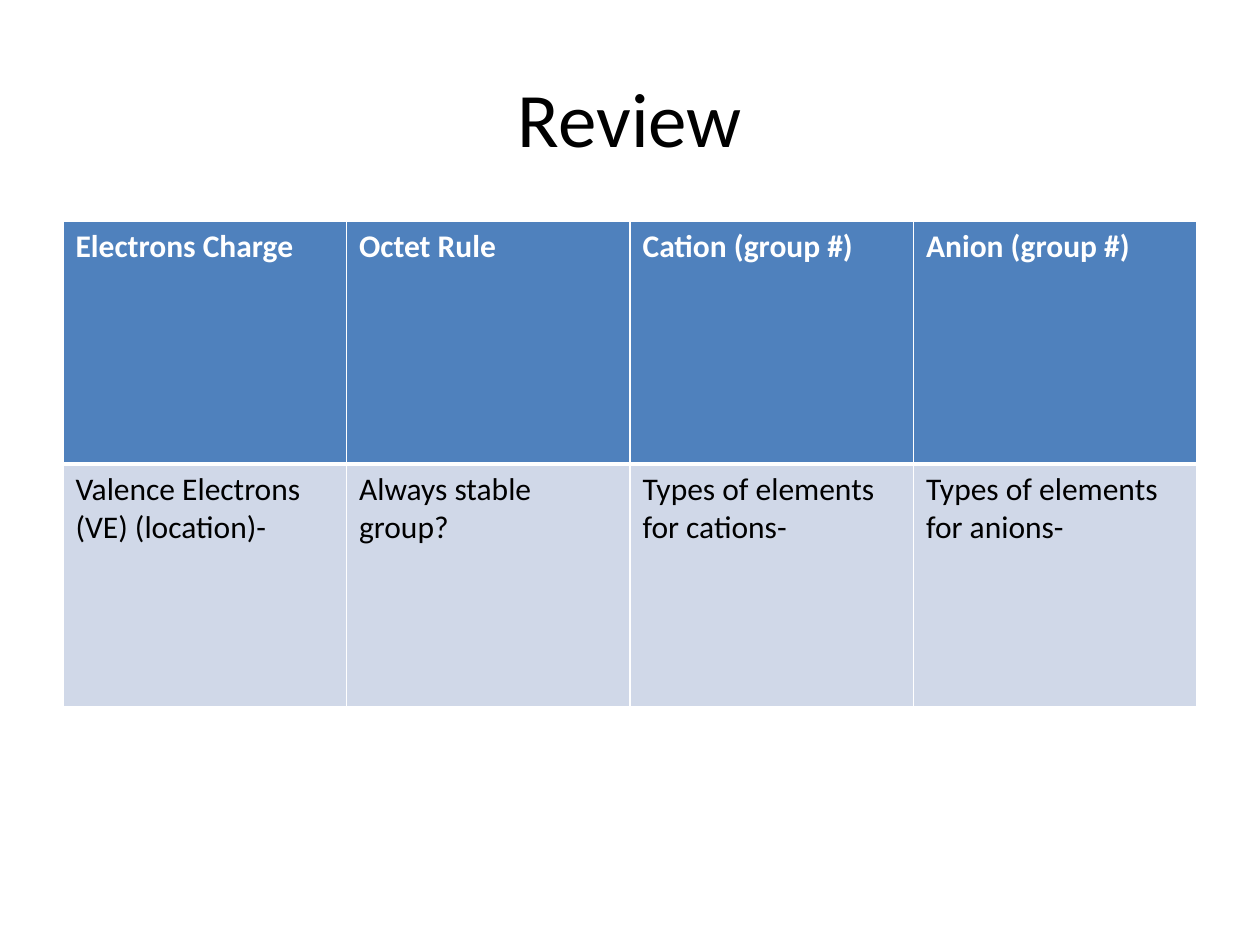
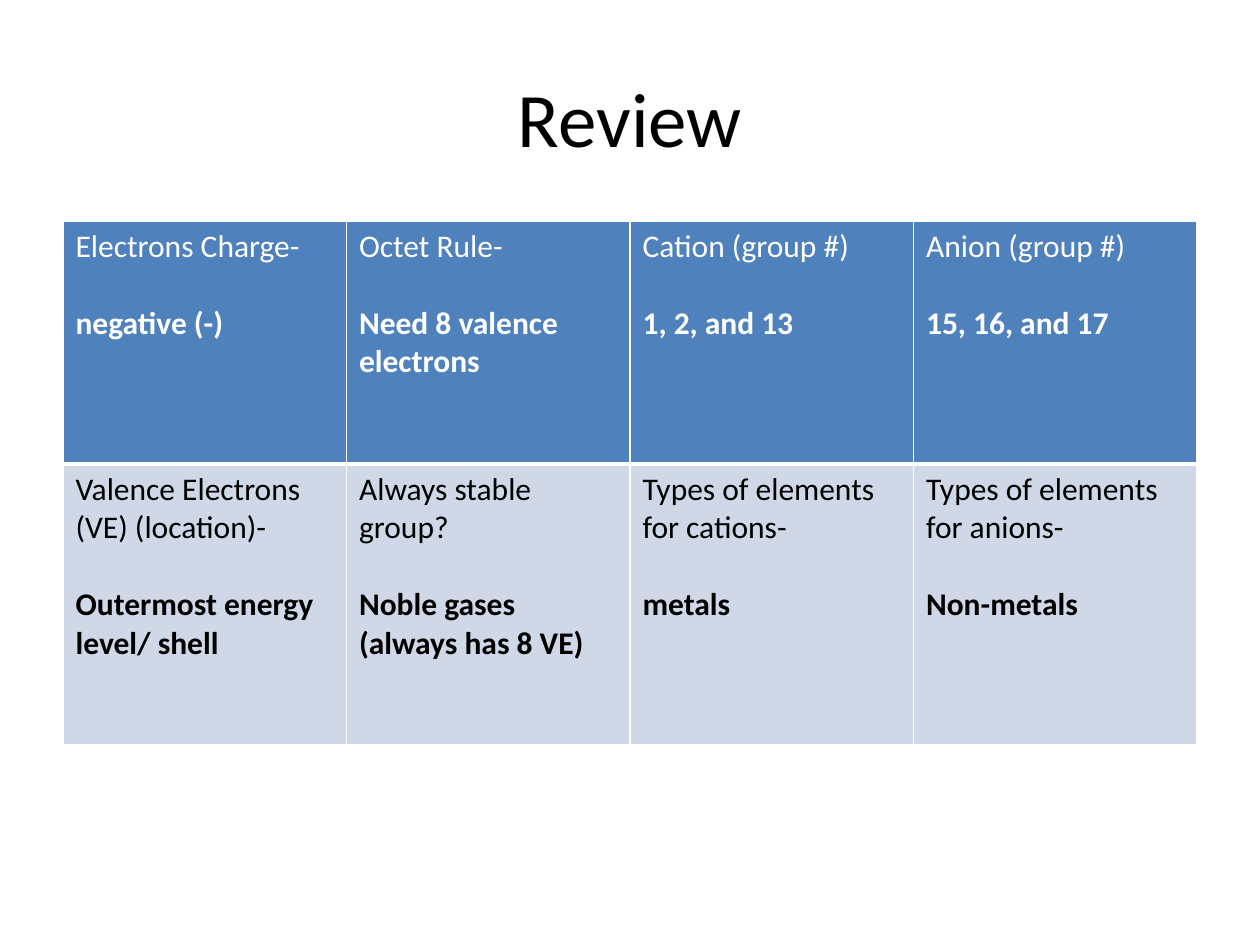
from lxml.etree import SubElement
from pptx import Presentation
from pptx.dml.color import RGBColor
from pptx.enum.text import MSO_ANCHOR, PP_ALIGN
from pptx.oxml.ns import qn
from pptx.util import Emu, Pt

TITLE = "Review"
BODY = ["Valence Electrons (VE) (location)-", "Always stable group?",
        "Types of elements for cations-", "Types of elements for anions-"]
SLIDES = [
    {"row_heights": (243, 243), "header_bold": True, "rows": [
        [("Electrons Charge",), ("Octet Rule",), ("Cation (group #)",), ("Anion (group #)",)],
        [(question,) for question in BODY],
    ]},
    {"row_heights": (243, 281), "header_bold": False, "rows": [
        [("Electrons Charge-", "negative (-)"),
         ("Octet Rule-", "Need 8 valence electrons"),
         ("Cation (group #)", "1, 2, and 13"),
         ("Anion (group #)", "15, 16, and 17")],
        list(zip(BODY, ["Outermost energy level/ shell", "Noble gases (always has 8 VE)",
                        "metals", "Non-metals"])),
    ]},
]

THEME = {
    "font": "Calibri", "title_size": 44, "cell_size": 18, "answer_gap": 22,
    "title_color": "000000", "border": "FFFFFF", "thin": 1, "thick": 3,
    "rows": [{"fill": "4F81BD", "color": "FFFFFF"}, {"fill": "D0D8E8", "color": "000000"}],
}
SLIDE_W, SLIDE_H = 1260, 945
LEFT, WIDTH = 63, 1134
TITLE_TOP, TITLE_H = 38, 157
TABLE_TOP = 221


def px(n):
    return Emu(round(n * 914400 / 126))


def add_run(p, text, size, color, bold=False):
    r = p.add_run()
    r.text = text
    for name, value in {"name": THEME["font"], "size": Pt(size), "bold": bold}.items():
        setattr(r.font, name, value)
    r.font.color.rgb = RGBColor.from_string(color)


def add_title(s):
    tf = s.shapes.add_textbox(*map(px, (LEFT, TITLE_TOP, WIDTH, TITLE_H))).text_frame
    for name, value in {"word_wrap": True, "vertical_anchor": MSO_ANCHOR.MIDDLE}.items():
        setattr(tf, name, value)
    p = tf.paragraphs[0]
    p.alignment = PP_ALIGN.CENTER
    add_run(p, TITLE, THEME["title_size"], THEME["title_color"])


def set_borders(cell, widths):
    tc_pr = cell._tc.get_or_add_tcPr()
    for side, width in widths.items():
        ln = SubElement(tc_pr, qn(f"a:ln{side}"), w=str(Pt(width)))
        SubElement(SubElement(ln, qn("a:solidFill")), qn("a:srgbClr"), val=THEME["border"])


def fill_cell(cell, lines, style, is_header, header_bold):
    thin, thick = THEME["thin"], THEME["thick"]
    set_borders(cell, {"L": thin, "R": thin, "T": thin if is_header else thick,
                       "B": thick if is_header else thin})
    cell.fill.solid()
    cell.fill.fore_color.rgb = RGBColor.from_string(style["fill"])
    tf = cell.text_frame
    for i, text in enumerate(lines):
        p = tf.add_paragraph() if i else tf.paragraphs[0]
        if i:
            p.space_before = Pt(THEME["answer_gap"])
        bold = i > 0 or (is_header and header_bold)
        add_run(p, text, THEME["cell_size"], style["color"], bold)


def add_review_table(s, rows, row_heights, header_bold):
    cols = len(rows[0])
    table = s.shapes.add_table(len(rows), cols, px(LEFT), px(TABLE_TOP),
                               px(WIDTH), px(sum(row_heights))).table
    for column in table.columns:
        column.width = px(WIDTH / cols)
    for i, (row, height, style) in enumerate(zip(rows, row_heights, THEME["rows"])):
        table.rows[i].height = px(height)
        for j, lines in enumerate(row):
            fill_cell(table.cell(i, j), lines, style, i == 0, header_bold)


def main():
    prs = Presentation()
    prs.slide_width, prs.slide_height = px(SLIDE_W), px(SLIDE_H)
    for content in SLIDES:
        s = prs.slides.add_slide(prs.slide_layouts[6])
        add_title(s)
        add_review_table(s, **content)
    prs.save("out.pptx")


if __name__ == "__main__":
    main()
